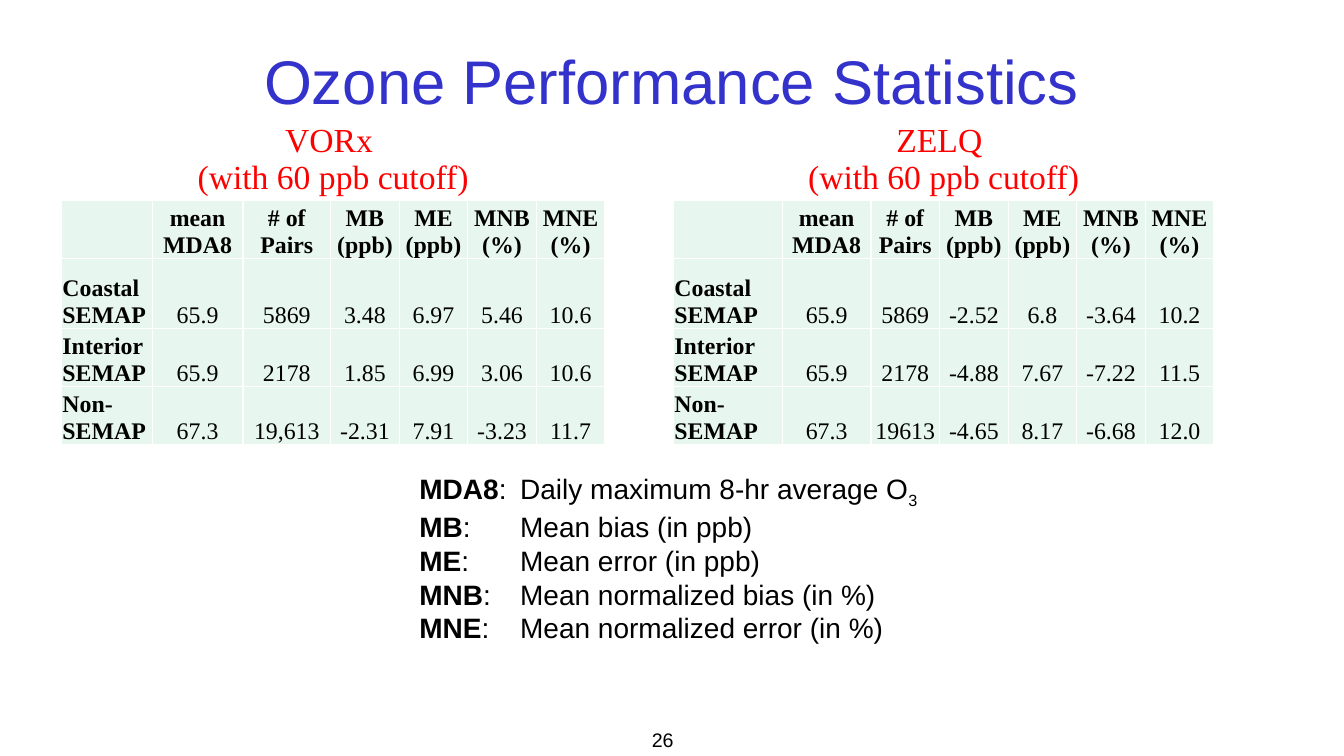
from dataclasses import dataclass

from lxml.etree import SubElement
from pptx import Presentation
from pptx.dml.color import RGBColor
from pptx.enum.text import MSO_ANCHOR, PP_ALIGN
from pptx.oxml import parse_xml
from pptx.oxml.ns import nsdecls, qn
from pptx.util import Inches, Pt


@dataclass(frozen=True)
class Theme:
    sans: str = "Arial"
    serif: str = "Times New Roman"
    title_color: str = "3333CC"
    model_color: str = "FF0000"
    ink: str = "000000"
    cell_fill: str = "E7F6EF"
    grid: str = "FFFFFF"
    title_size: int = 44
    model_size: int = 24
    legend_size: int = 20
    cell_size: int = 17
    number_size: int = 14


METRICS = ["mean MDA8", "# of Pairs", "MB (ppb)", "ME (ppb)", "MNB (%)", "MNE (%)"]
REGIONS = ["Coastal SEMAP", "Interior SEMAP", "Non- SEMAP"]
MODELS = {
    "VORx": [
        ["65.9", "5869", "3.48", "6.97", "5.46", "10.6"],
        ["65.9", "2178", "1.85", "6.99", "3.06", "10.6"],
        ["67.3", "19,613", "-2.31", "7.91", "-3.23", "11.7"],
    ],
    "ZELQ": [
        ["65.9", "5869", "-2.52", "6.8", "-3.64", "10.2"],
        ["65.9", "2178", "-4.88", "7.67", "-7.22", "11.5"],
        ["67.3", "19613", "-4.65", "8.17", "-6.68", "12.0"],
    ],
}
COLUMN_WIDTHS = [0.9, 0.9, 0.87] + [0.68] * 5 + [1.08, 0.88] + [0.68] * 5
ROW_HEIGHTS = [0.83, 0.57, 0.69, 0.56, 0.56]
MODEL_STRIDE = len(METRICS) + 2  # region column, metrics, gap column
LEGEND = [
    ("MDA8", ":\tDaily maximum 8-hr average O", "3"),
    ("MB", ":\tMean bias (in ppb)", ""),
    ("ME", ": \tMean error (in ppb)", ""),
    ("MNB", ":\tMean normalized bias (in %)", ""),
    ("MNE", ":\tMean normalized error (in %)", ""),
]


class SlideBuilder:
    def __init__(self, slide, theme):
        self.slide = slide
        self.theme = theme

    def style(self, run, size, color, face, bold=False):
        run.font.size = Pt(size)
        run.font.name = face
        run.font.bold = bold
        run.font.color.rgb = RGBColor.from_string(color)

    def text_frame(self, left, top, width, height):
        box = self.slide.shapes.add_textbox(
            Inches(left), Inches(top), Inches(width), Inches(height))
        box.text_frame.word_wrap = True
        return box.text_frame

    def line(self, bounds, text, size, color, align, anchor=MSO_ANCHOR.TOP):
        frame = self.text_frame(*bounds)
        frame.text = text
        frame.vertical_anchor = anchor
        paragraph = frame.paragraphs[0]
        paragraph.alignment = align
        self.style(paragraph.runs[0], size, color, self.theme.sans)

    def legend(self, bounds, entries, tab_stop):
        """Write term, tab and meaning per line; the last part is a subscript."""
        frame = self.text_frame(*bounds)
        frame.text = "\n".join(term for term, _, _ in entries)
        for paragraph, (_, meaning, subscript) in zip(frame.paragraphs, entries):
            paragraph.add_run().text = meaning
            if subscript:
                mark = paragraph.add_run()
                mark.text = subscript
                mark.font._element.set("baseline", "-25000")
            for index, run in enumerate(paragraph.runs):
                self.style(run, self.theme.legend_size, self.theme.ink,
                           self.theme.sans, bold=index == 0)
            tabs = SubElement(paragraph._p.get_or_add_pPr(), qn("a:tabLst"))
            SubElement(tabs, qn("a:tab"), pos=str(Inches(tab_stop)), algn="l")

    def borders(self, cell):
        properties = cell._tc.get_or_add_tcPr()
        for index, side in enumerate(("lnL", "lnR", "lnT", "lnB")):
            properties.insert(index, parse_xml(
                f'<a:{side} {nsdecls("a")} w="{Pt(1)}"><a:solidFill>'
                f'<a:srgbClr val="{self.theme.grid}"/></a:solidFill></a:{side}>'))

    def cell(self, cell, text, size, color, align, anchor, bold=False):
        cell.text = text
        cell.vertical_anchor = anchor
        cell.margin_left = cell.margin_right = cell.margin_top = Inches(0.01)
        cell.margin_bottom = 0
        for paragraph in cell.text_frame.paragraphs:
            paragraph.alignment = align
            for run in paragraph.runs:
                self.style(run, size, color, self.theme.serif, bold)

    def blank_table(self, left, top):
        table = self.slide.shapes.add_table(
            len(ROW_HEIGHTS), len(COLUMN_WIDTHS), Inches(left), Inches(top),
            Inches(sum(COLUMN_WIDTHS)), Inches(sum(ROW_HEIGHTS))).table
        table.first_row = table.horz_banding = False
        for column, width in zip(table.columns, COLUMN_WIDTHS):
            column.width = Inches(width)
        for row, height in zip(table.rows, ROW_HEIGHTS):
            row.height = Inches(height)
        for cell in table.iter_cells():
            cell.fill.background()
            self.borders(cell)
        return table

    def model_statistics(self, table, first, model, values):
        """Fill one model's block, starting at column index first."""
        theme = self.theme
        heading = table.cell(0, first)
        heading.merge(table.cell(0, first + len(METRICS)))
        self.cell(heading, f"{model} \n(with 60 ppb cutoff)", theme.model_size,
                  theme.model_color, PP_ALIGN.CENTER, MSO_ANCHOR.MIDDLE)
        rows = [["", *METRICS]]
        rows += [[region, *numbers] for region, numbers in zip(REGIONS, values)]
        for r, row in enumerate(rows):
            for c, text in enumerate(row):
                cell = table.cell(r + 1, first + c)
                cell.fill.solid()
                cell.fill.fore_color.rgb = RGBColor.from_string(theme.cell_fill)
                align = PP_ALIGN.CENTER if c else PP_ALIGN.LEFT
                self.cell(cell, text, theme.cell_size, theme.ink, align,
                          MSO_ANCHOR.BOTTOM, bold=r == 0 or c == 0)


def main():
    presentation = Presentation()
    presentation.slide_width = Inches(13.33)
    presentation.slide_height = Inches(7.5)
    theme = Theme()
    slide = presentation.slides.add_slide(presentation.slide_layouts[6])
    builder = SlideBuilder(slide, theme)

    builder.line((1, 0.17, 11.33, 1.25), "Ozone Performance Statistics",
                 theme.title_size, theme.title_color, PP_ALIGN.CENTER,
                 MSO_ANCHOR.MIDDLE)
    builder.line((5.67, 7.17, 1.11, 0.25), "26", theme.number_size, theme.ink,
                 PP_ALIGN.RIGHT)
    statistics = builder.blank_table(0.61, 1.16)
    for index, (model, values) in enumerate(MODELS.items()):
        builder.model_statistics(statistics, index * MODEL_STRIDE, model, values)
    builder.legend((4.06, 4.63, 5.19, 1.78), LEGEND, tab_stop=1)
    presentation.save("out.pptx")


if __name__ == "__main__":
    main()
